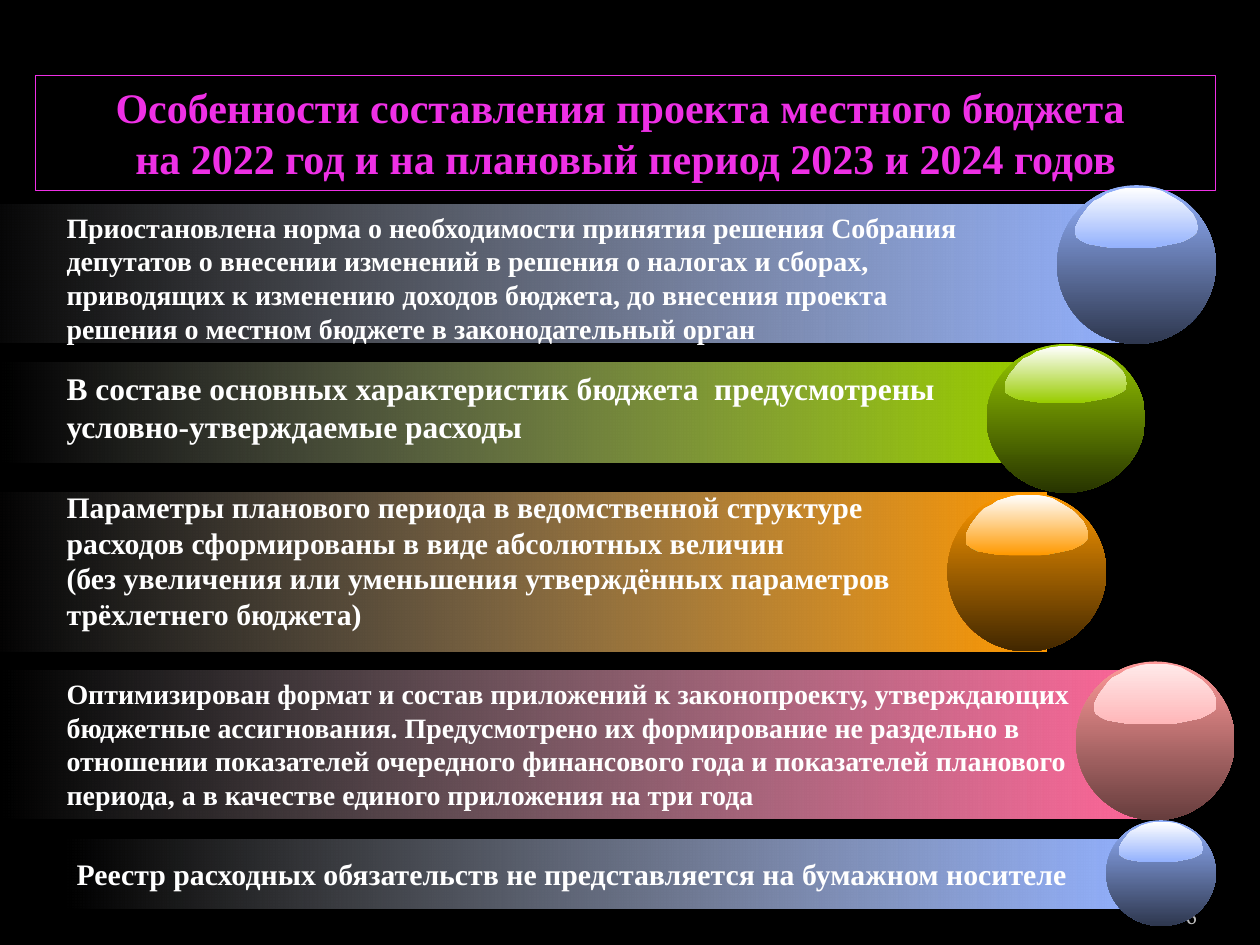
from lxml.etree import SubElement
from pptx import Presentation
from pptx.dml.color import RGBColor
from pptx.enum.shapes import MSO_SHAPE as Kind
from pptx.enum.text import MSO_ANCHOR as Anchor, MSO_AUTO_SIZE as Fit, PP_ALIGN as Align
from pptx.oxml.ns import qn
from pptx.util import Inches, Pt

COLS, ROWS = 100, 75
CELL = Inches(10) // COLS
SERIF = "Times New Roman"
WHITE, PINK = "FFFFFF", "EE30E5"
BLUE = ("93B1FD", "93B1FD", "2E374E", WHITE, "93B1FD")
GREEN = ("99CC00", "99CC00", "273400", WHITE, "99CC00")
AMBER = ("FF9900", "FF9900", "412700", WHITE, "FF9900")
ROSE = ("FF6699", "FF9999", "663D3D", "FFE9E9", "FFB7B9")
GLOSS = [(99, 56), (100, 67), (99, 75), (97, 79), (94, 83), (87, 90), (78, 94),
         (68, 98), (61, 100), (36, 100), (27, 99), (18, 96), (10, 93), (5, 88),
         (1, 82), (0, 75), (0, 67), (1, 62), (4, 50), (7, 42), (11, 31), (15, 23),
         (21, 17), (26, 10), (32, 6), (38, 2), (44, 0), (51, 0), (58, 0), (64, 2),
         (71, 6), (76, 12), (82, 19), (88, 27), (92, 35), (96, 44)]

TITLE = ("Особенности составления проекта местного бюджета \v"
         "на 2022 год и на плановый период 2023 и 2024 годов")
ITEMS = [
    (BLUE, (-2.8, 16.2, 92.1, 11), (83.9, 14.7, 12.6, 12.6), (4.3, 16.2, 76.4, 11.8), 16, Anchor.TOP,
     "Приостановлена норма о необходимости принятия решения Собрания депутатов о внесении "
     "изменений в решения о налогах и сборах, приводящих к изменению доходов бюджета, до "
     "внесения проекта решения о местном бюджете в законодательный орган"),
    (GREEN, (0, 28.8, 80.7, 7.9), (78.3, 27.3, 12.6, 11.8), (4.3, 28.8, 72.4, 7.1), 18, Anchor.TOP,
     "В составе основных характеристик бюджета  предусмотрены условно-утверждаемые расходы"),
    (AMBER, (-1.2, 39.1, 84.3, 12.6), (75.2, 39.1, 12.6, 12.6), (4.3, 38.3, 77.2, 15.1), 17, Anchor.TOP,
     "Параметры планового периода в ведомственной структуре\n"
     "расходов сформированы в виде абсолютных величин \v"
     "(без увеличения или уменьшения утверждённых параметров трёхлетнего бюджета)"),
    (ROSE, (0, 53.2, 90.9, 11.8), (85.4, 52.5, 12.6, 12.6), (4.3, 53.2, 81.9, 11.8), 16, Anchor.TOP,
     "Оптимизирован формат и состав приложений к законопроекту, утверждающих бюджетные "
     "ассигнования. Предусмотрено их формирование не раздельно в отношении показателей "
     "очередного финансового года и показателей планового периода, а в качестве единого "
     "приложения на три года"),
    (BLUE, (5.1, 66.6, 85, 5.5), (87.8, 65.1, 8.7, 8.4), (5.1, 66.6, 85, 5.5), 17, Anchor.MIDDLE,
     "Реестр расходных обязательств не представляется на бумажном носителе"),
]


def tint(code):
    """Turn a hex string into a colour."""
    return RGBColor.from_string(code)


def span(box):
    """Turn a box in grid cells into lengths."""
    return [round(v * CELL) for v in box]


def blend(shape, first, last, angle):
    """Fill a shape with a two-stop gradient and no outline."""
    shape.shadow.inherit = False
    shape.line.fill.background()
    shape.fill.gradient()
    shape.fill.gradient_angle = angle
    for stop, code in zip(shape.fill.gradient_stops, (first, last)):
        stop.color.rgb = tint(code)


def write(frame, text, size, code=WHITE, face=SERIF, bold=True, align=Align.LEFT, anchor=Anchor.TOP):
    """Put formatted text in a frame."""
    frame.word_wrap = True
    frame.auto_size = Fit.NONE
    frame.vertical_anchor = anchor
    frame.text = text
    for para in frame.paragraphs:
        para.alignment = align
        for run in para.runs:
            font = run.font
            font.name, font.size, font.bold = face, Pt(size), bold
            font.color.rgb = tint(code)


def head(slide, box):
    """Place the framed title."""
    title = slide.shapes.title
    title.left, title.top, title.width, title.height = span(box)
    title.line.color.rgb = tint(PINK)
    title.line.width = Pt(0.75)
    write(title.text_frame, TITLE, 24, PINK, align=Align.CENTER)


def bar(slide, box, code):
    """Place a bar that fades out to the left."""
    shape = slide.shapes.add_shape(Kind.RECTANGLE, *span(box))
    blend(shape, WHITE, code, 0)
    clear = shape.fill.gradient_stops[0]
    node = shape._element.spPr.find(".//" + qn("a:srgbClr"))
    SubElement(node, qn("a:alpha")).set("val", "0")


def ball(slide, box, top, base, shine, glow):
    """Place a glossy ball inside the box."""
    group = slide.shapes.add_group_shape().shapes
    left, upper, wide, high = span(box)
    blend(group.add_shape(Kind.OVAL, left, upper, wide, high), top, base, 270)
    dots = [(left + wide * (0.115 + 0.0077 * x), upper + high * (0.015 + 0.0038 * y))
            for x, y in GLOSS]
    pen = group.build_freeform(*map(round, dots[0]))
    pen.add_line_segments([(round(x), round(y)) for x, y in dots[1:]])
    blend(pen.convert_to_shape(), shine, glow, 270)


def note(slide, box, text, size, anchor):
    """Place the text of one item."""
    write(slide.shapes.add_textbox(*span(box)).text_frame, text, size, anchor=anchor)


def page(slide, box):
    """Place the page number."""
    frame = slide.shapes.add_textbox(*span(box)).text_frame
    frame.margin_left = frame.margin_right = 0
    write(frame, "6", 12, "BDBDBD", "Vollkorn", False, Align.RIGHT, Anchor.BOTTOM)


def main():
    """Build the slide and save it."""
    deck = Presentation()
    deck.slide_width, deck.slide_height = COLS * CELL, ROWS * CELL
    slide = deck.slides.add_slide(deck.slide_layouts[5])
    slide.background.fill.solid()
    slide.background.fill.fore_color.rgb = tint("000000")
    head(slide, (2.8, 6, 93.7, 9.1))
    page(slide, (86.7, 70.2, 8.3, 4))
    for hues, strip, orb, area, size, anchor, text in ITEMS:
        bar(slide, strip, hues[0])
        ball(slide, orb, *hues[1:])
        note(slide, area, text, size, anchor)
    deck.save("out.pptx")


if __name__ == "__main__":
    main()
